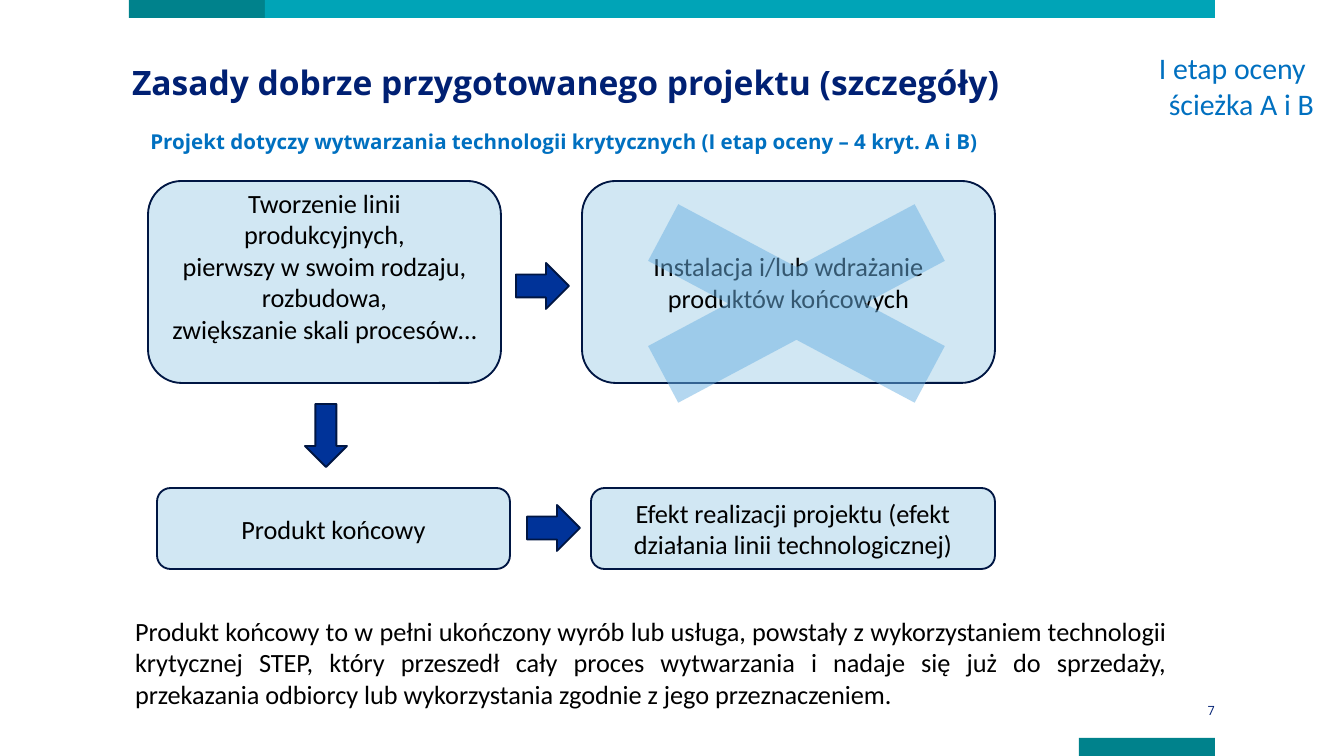
from pptx import Presentation
from pptx.dml.color import RGBColor
from pptx.enum.shapes import MSO_SHAPE as Shape
from pptx.enum.text import MSO_ANCHOR as Anchor, MSO_AUTO_SIZE as AutoSize, PP_ALIGN as Align
from pptx.oxml.ns import qn
from pptx.util import Pt
from lxml.etree import SubElement

PX = 914400 / 134.4
NAVY, OUTLINE, BLUE = "002073", "001643", "0070C0"
TEAL, DARK_TEAL = "00A4B7", "00828C"
PALE, SKY, ARROW = "D1E7F3", "6BB1E2", "003399"
INSET = (13, 7, 13, 7)

# Content; places are left, top, width, height in px
TITLE = "Zasady dobrze przygotowanego projektu (szczegóły)"
SUBTITLE = "Projekt dotyczy wytwarzania technologii krytycznych (I etap oceny – 4 kryt. A i B)"
STAGE = ["I etap oceny", "ścieżka A i B"]
DEFINITION = (
    "Produkt końcowy to w pełni ukończony wyrób lub usługa, powstały z wykorzystaniem "
    "technologii krytycznej STEP, który przeszedł cały proces wytwarzania i nadaje się już "
    "do sprzedaży, przekazania odbiorcy lub wykorzystania zgodnie z jego przeznaczeniem."
)
BARS = [
    ((129, 0, 136, 18), DARK_TEAL),
    ((265, 0, 950, 18), TEAL),
    ((1079, 738, 136, 18), DARK_TEAL),
]
# Place, paragraphs, bottom inset
BOXES = [
    ((582, 181, 413, 202), ["Instalacja i/lub wdrażanie produktów końcowych"], 7),
    ((148, 181, 353, 202), ["Tworzenie linii produkcyjnych,", "pierwszy w swoim rodzaju,",
                            "rozbudowa,", "zwiększanie skali procesów…"], 39),
    ((591, 488, 404, 81), ["Efekt realizacji projektu (efekt działania linii technologicznej)"], 7),
    ((157, 488, 353, 81), ["Produkt końcowy"], 7),
]
CROSS = (540, 167, 513, 273)
ARROWS = [
    (Shape.DOWN_ARROW, (305, 404, 42, 63)),
    (Shape.RIGHT_ARROW, (516, 263, 53, 46)),
    (Shape.RIGHT_ARROW, (527, 505, 53, 46)),
]


def emu(place):
    return [round(v * PX) for v in place]


def rgb(color):
    return RGBColor.from_string(color)


def write(target, lines, size=14.1, font="Calibri", color="000000", bold=False,
          align=Align.LEFT, anchor=Anchor.TOP, inset=INSET, spacing=None):
    frame = target.text_frame
    frame.word_wrap = True
    frame.auto_size = AutoSize.NONE
    frame.vertical_anchor = anchor
    (frame.margin_left, frame.margin_top,
     frame.margin_right, frame.margin_bottom) = emu(inset)
    lines = [lines] if isinstance(lines, str) else lines
    aligns = align if isinstance(align, list) else [align] * len(lines)
    for i, (line, side) in enumerate(zip(lines, aligns)):
        para = frame.paragraphs[0] if i == 0 else frame.add_paragraph()
        para.alignment = side
        if spacing:
            para.line_spacing = Pt(spacing)
        run = para.add_run()
        run.text = line
        run.font.size, run.font.name, run.font.bold = Pt(size), font, bold
        run.font.color.rgb = rgb(color)


def draw(kind, place, fill, line=None):
    shape = slide.shapes.add_shape(kind, *emu(place))
    shape.shadow.inherit = False
    shape.fill.solid()
    shape.fill.fore_color.rgb = rgb(fill)
    if line:
        shape.line.color.rgb = rgb(line)
        shape.line.width = Pt(1)
    else:
        shape.line.fill.background()
    return shape


def label(place, lines, **style):
    write(slide.shapes.add_textbox(*emu(place)), lines, **style)


prs = Presentation()
prs.slide_width, prs.slide_height = emu((1344, 756))
slide = prs.slides.add_slide(prs.slide_layouts[5])

# Page bars and number
for place, fill in BARS:
    draw(Shape.RECTANGLE, place, fill)
label((1079, 702, 136, 17), "7", size=6.8, font="Open Sans", color=NAVY,
      align=Align.RIGHT, anchor=Anchor.MIDDLE, inset=(0, 0, 0, 0))

# Headings
heading = dict(font="Open Sans", bold=True, inset=(0, 0, 0, 0), spacing=27)
title = slide.shapes.title
title.left, title.top, title.width, title.height = emu((132, 52, 1058, 60))
write(title, TITLE, size=18, color=NAVY, **heading)
label((141, 103, 847, 136), SUBTITLE, size=11, color=BLUE, align=Align.CENTER, **heading)
label((1146, 43, 191, 86), STAGE, size=16, color=BLUE, align=[Align.LEFT, Align.CENTER])

# Process boxes
for place, lines, bottom in BOXES:
    box = draw(Shape.ROUNDED_RECTANGLE, place, PALE, OUTLINE)
    write(box, lines, align=Align.CENTER, anchor=Anchor.MIDDLE, inset=INSET[:3] + (bottom,))

# Half-transparent cross over the excluded step
cross = draw(Shape.MATH_MULTIPLY, CROSS, SKY)
cross_color = cross.fill._xPr.find(qn("a:solidFill"))[0]
SubElement(cross_color, qn("a:alpha"), val="50000")

# Arrows
for kind, place in ARROWS:
    draw(kind, place, ARROW, OUTLINE)

# Definition
label((122, 608, 1058, 109), DEFINITION, align=Align.JUSTIFY)

prs.save("out.pptx")
